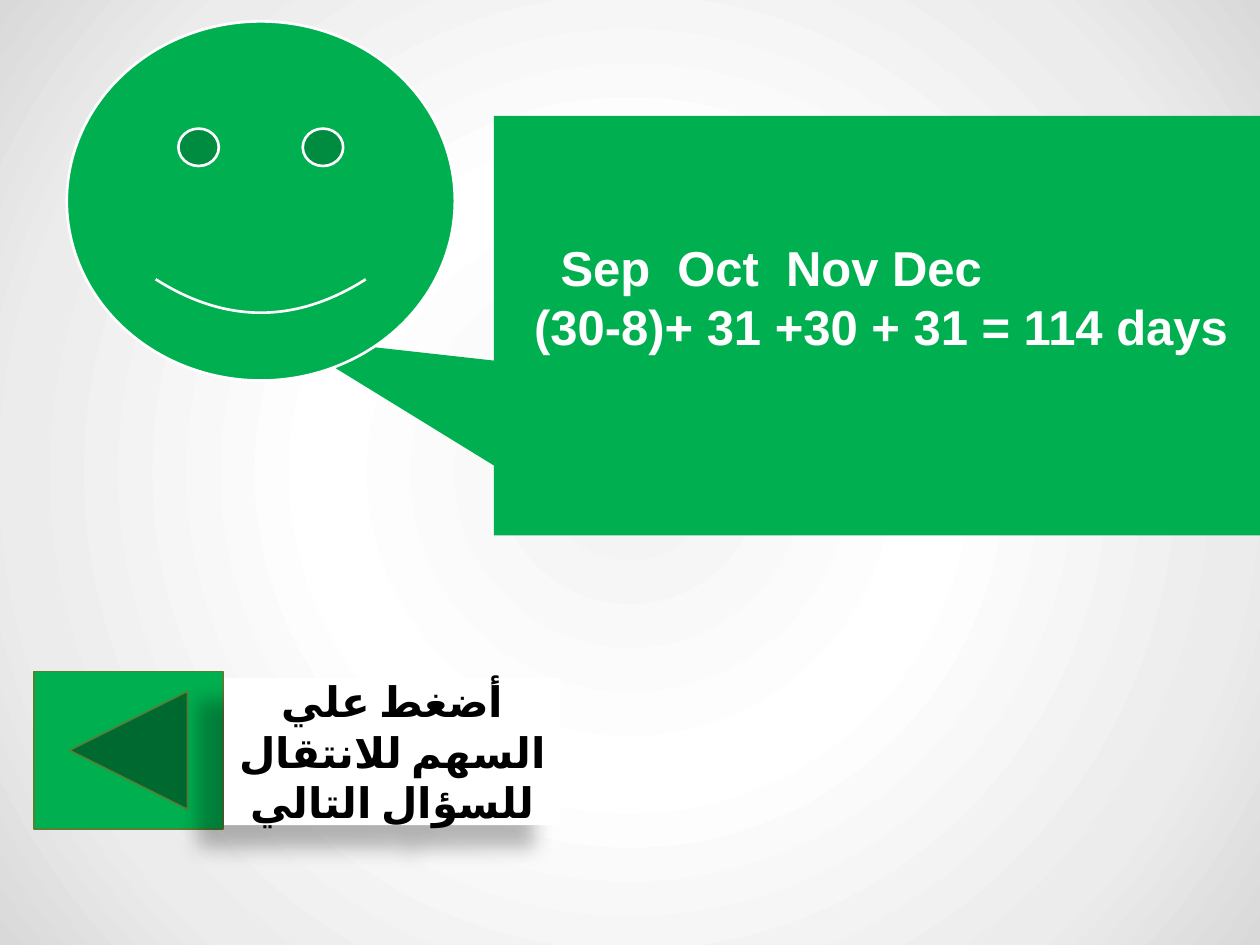
"""Build the answer slide with a talking smiley and a next-question button."""
from dataclasses import dataclass

import pptx
import pptx.dml.color
import pptx.enum.shapes
import pptx.enum.text
import pptx.oxml
import pptx.oxml.ns
import pptx.util
from pptx.util import Inches

SHAPE = pptx.enum.shapes.MSO_SHAPE
ALIGN = pptx.enum.text.PP_ALIGN
COLORS = {
    "green": "00B050",
    "olive": "548235",
    "white": "FFFFFF",
    "black": "000000",
}
BACKDROP = {0: "F2F2F2", 39: "FFFFFF", 78: "ECECEC", 100: "D9D9D9"}


@dataclass
class Line:
    text: str
    indent: float = 0
    align: ALIGN = ALIGN.LEFT
    rtl: bool = False


@dataclass
class Figure:
    kind: SHAPE
    place: tuple[float, float, float, float]
    fill: str
    adjustments: tuple[float, ...] = ()
    outline: str | None = None
    weight: float = 0
    lines: tuple[Line, ...] = ()
    size: float = 24
    font: str = "Arial"
    ink: str = "white"
    bottom: float = 0.05
    shadow: bool = False


FIGURES = [
    Figure(SHAPE.RECTANGULAR_CALLOUT, (3.92, 0.92, 6.08, 3.33), "green", (-0.772, 0.028),
           lines=(Line("Sep  Oct  Nov Dec", 0.43), Line("(30-8)+ 31 +30 + 31 = 114 days", 0.22)),
           size=28, bottom=0.52),
    Figure(SHAPE.SMILEY_FACE, (0.53, 0.17, 3.08, 2.85), "green", (0.047,), "white", 1.5),
    Figure(SHAPE.ACTION_BUTTON_BACK_OR_PREVIOUS, (0.27, 5.33, 1.5, 1.25), "green",
           outline="olive", weight=1),
    Figure(SHAPE.RECTANGLE, (1.78, 5.38, 2.67, 1.17), "white",
           lines=(Line("أضغط علي السهم للانتقال للسؤال التالي", align=ALIGN.CENTER, rtl=True),),
           font="Calibri", ink="black", shadow=True),
]


def rgb(name: str) -> pptx.dml.color.RGBColor:
    """Return the named colour."""
    return pptx.dml.color.RGBColor.from_string(COLORS[name])


def apply(target: object, values: dict) -> None:
    """Set each attribute in the dict on the target."""
    for name, value in values.items():
        setattr(target, name, value)


def paint_background(page: pptx.slide.Slide) -> None:
    """Give the page a circular gradient."""
    stops = "".join(
        f'<a:gs pos="{position * 1000}"><a:srgbClr val="{color}"/></a:gs>'
        for position, color in BACKDROP.items()
    )
    backdrop = pptx.oxml.parse_xml(
        f'<p:bg {pptx.oxml.ns.nsdecls("p", "a")}><p:bgPr><a:gradFill rotWithShape="1">'
        f'<a:gsLst>{stops}</a:gsLst><a:path path="circle">'
        '<a:fillToRect l="50000" t="50000" r="50000" b="50000"/></a:path>'
        '</a:gradFill><a:effectLst/></p:bgPr></p:bg>'
    )
    page.shapes._spTree.getparent().insert(0, backdrop)


def cast_shadow(box: pptx.shapes.autoshape.Shape) -> None:
    """Add a soft shadow below and to the left of the box."""
    effects = box._element.spPr.find(pptx.oxml.ns.qn("a:effectLst"))
    blur, distance = pptx.util.Pt(11.8), pptx.util.Pt(19.7)
    effects.append(pptx.oxml.parse_xml(
        f'<a:outerShdw {pptx.oxml.ns.nsdecls("a")} blurRad="{blur}" dist="{distance}" '
        f'dir="{141 * 60000}" algn="ctr" rotWithShape="0"><a:srgbClr val="{COLORS["black"]}">'
        '<a:alpha val="28000"/></a:srgbClr></a:outerShdw>'
    ))


def write_line(para: pptx.text.text._Paragraph, line: Line, figure: Figure) -> None:
    """Write one styled paragraph."""
    para.alignment = line.align
    properties = para._p.get_or_add_pPr()
    if line.indent:
        properties.set("marL", str(Inches(line.indent)))
    span = para.add_run()
    span.text = line.text
    apply(span.font, {"name": figure.font, "size": pptx.util.Pt(figure.size), "bold": True})
    span.font.color.rgb = rgb(figure.ink)
    if line.rtl:
        properties.set("rtl", "1")
        letters = span._r.get_or_add_rPr()
        letters.set("lang", "ar-EG")
        letters.append(pptx.oxml.parse_xml(
            f'<a:cs {pptx.oxml.ns.nsdecls("a")} typeface="{figure.font}"/>'
        ))


def draw_figure(page: pptx.slide.Slide, figure: Figure) -> None:
    """Draw one shape with its outline, shadow and text."""
    box = page.shapes.add_shape(figure.kind, *map(Inches, figure.place))
    box.shadow.inherit = False
    for index, value in enumerate(figure.adjustments):
        box.adjustments[index] = value
    box.fill.solid()
    box.fill.fore_color.rgb = rgb(figure.fill)
    if figure.outline:
        box.line.color.rgb = rgb(figure.outline)
        box.line.width = pptx.util.Pt(figure.weight)
    else:
        box.line.fill.background()
    if figure.shadow:
        cast_shadow(box)
    frame = box.text_frame
    apply(frame, {
        "word_wrap": True,
        "vertical_anchor": pptx.enum.text.MSO_ANCHOR.MIDDLE,
        "margin_bottom": Inches(figure.bottom),
    })
    for index, line in enumerate(figure.lines):
        para = frame.add_paragraph() if index else frame.paragraphs[0]
        write_line(para, line, figure)


def main() -> None:
    """Build and save the deck."""
    deck = pptx.Presentation()
    apply(deck, {"slide_width": Inches(10), "slide_height": Inches(7.5)})
    page = deck.slides.add_slide(deck.slide_layouts[6])
    paint_background(page)
    for figure in FIGURES:
        draw_figure(page, figure)
    deck.save("out.pptx")


if __name__ == "__main__":
    main()
